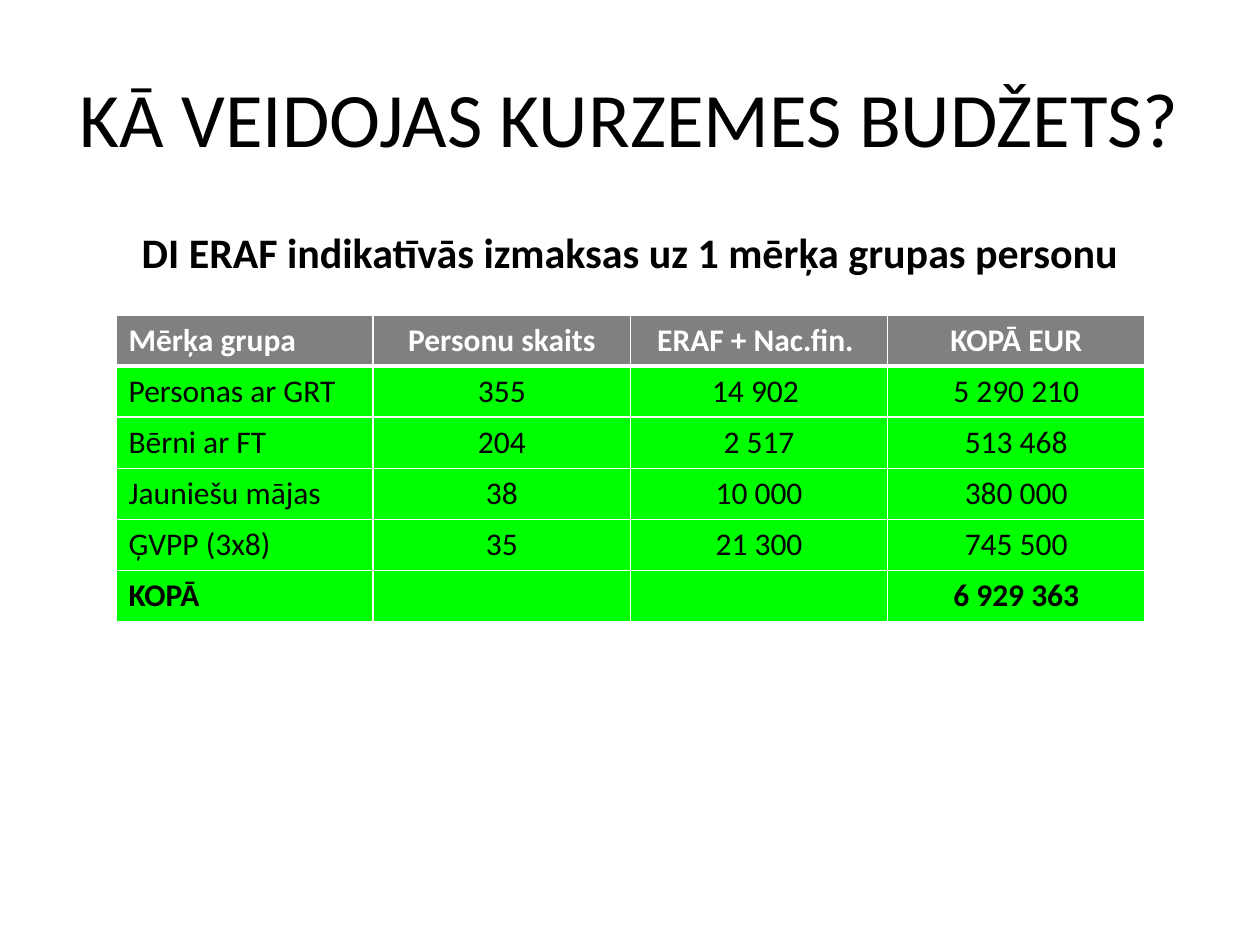
import pptx
import pptx.util
import pptx.dml.color
import pptx.enum.text
import pptx.oxml
import pptx.oxml.ns
from lxml import etree

Pt = pptx.util.Pt
RGBColor = pptx.dml.color.RGBColor
ALIGN = pptx.enum.text.PP_ALIGN
ANCHOR = pptx.enum.text.MSO_ANCHOR

BLACK = RGBColor(0x00, 0x00, 0x00)
WHITE = RGBColor(0xFF, 0xFF, 0xFF)
GREY = RGBColor(0x80, 0x80, 0x80)
GREEN = RGBColor(0x00, 0xFF, 0x00)

HEADING = "KĀ VEIDOJAS KURZEMES BUDŽETS?"
SUBHEADING = "DI ERAF indikatīvās izmaksas uz 1 mērķa grupas personu"
BUDGET = [
    ("Mērķa grupa", "Personu skaits", "ERAF + Nac.fin. ", "KOPĀ EUR"),
    ("Personas ar GRT", "355", "14 902 ", "5 290 210"),
    ("Bērni ar FT", "204", "2 517", "513 468"),
    ("Jauniešu mājas", "38", "10 000", "380 000"),
    ("ĢVPP (3x8)", "35", "21 300", "745 500"),
    ("KOPĀ", "", "", "6 929 363"),
]

HEADING_BOX = (36, 21.6, 648, 90)
SUBHEADING_BOX = (36, 126, 648, 356.4)
TABLE_LEFT, TABLE_TOP = 66.3, 180
COLUMN_WIDTH, ROW_HEIGHT = 147, 29.2

HEADING_FONT = {"size": Pt(44), "bold": False}
SUBHEADING_FONT = {"size": Pt(24), "bold": True}


def write(paragraph, text, align, font_values, color):
    paragraph.alignment = align
    run = paragraph.add_run()
    run.text = text
    for name, value in {"name": "Calibri", **font_values}.items():
        setattr(run.font, name, value)
    run.font.color.rgb = color


def fill_placeholder(placeholder, box, text, font_values, anchor):
    for name, value in zip(("left", "top", "width", "height"), box):
        setattr(placeholder, name, Pt(value))
    frame = placeholder.text_frame
    frame.word_wrap = True
    frame.vertical_anchor = anchor
    write(frame.paragraphs[0], text, ALIGN.CENTER, font_values, BLACK)
    return frame.paragraphs[0]


def add_borders(cell, widths):
    """Draw white cell borders; widths maps L, R, T, B to points."""
    properties = cell._tc.get_or_add_tcPr()
    for side, width in widths.items():
        properties.append(pptx.oxml.parse_xml(
            f'<a:ln{side} {pptx.oxml.ns.nsdecls("a")} w="{Pt(width)}">'
            f'<a:solidFill><a:srgbClr val="{WHITE}"/></a:solidFill></a:ln{side}>'))


def add_budget_table(slide):
    rows, columns = len(BUDGET), len(BUDGET[0])
    table = slide.shapes.add_table(
        rows, columns, Pt(TABLE_LEFT), Pt(TABLE_TOP),
        Pt(COLUMN_WIDTH * columns), Pt(ROW_HEIGHT * rows)).table
    for r, row in enumerate(BUDGET):
        header, total = r == 0, r == rows - 1
        for c, text in enumerate(row):
            cell = table.cell(r, c)
            add_borders(cell, {"L": 1, "R": 1, "T": 3 if r == 1 else 1,
                               "B": 3 if header else 1})
            cell.fill.solid()
            cell.fill.fore_color.rgb = GREY if header else GREEN
            if text:
                write(cell.text_frame.paragraphs[0], text,
                      ALIGN.CENTER if c else ALIGN.LEFT,
                      {"size": Pt(18), "bold": header or total},
                      WHITE if header else BLACK)


def main():
    presentation = pptx.Presentation()
    presentation.slide_width, presentation.slide_height = Pt(720), Pt(540)
    slide = presentation.slides.add_slide(presentation.slide_layouts[1])
    fill_placeholder(slide.shapes.title, HEADING_BOX, HEADING,
                     HEADING_FONT, ANCHOR.MIDDLE)
    subheading = fill_placeholder(slide.placeholders[1], SUBHEADING_BOX, SUBHEADING,
                                  SUBHEADING_FONT, ANCHOR.TOP)
    unbulleted = subheading._p.get_or_add_pPr()
    unbulleted.set("marL", "0")
    unbulleted.set("indent", "0")
    etree.SubElement(unbulleted, pptx.oxml.ns.qn("a:buNone"))
    add_budget_table(slide)
    presentation.save("out.pptx")


if __name__ == "__main__":
    main()
